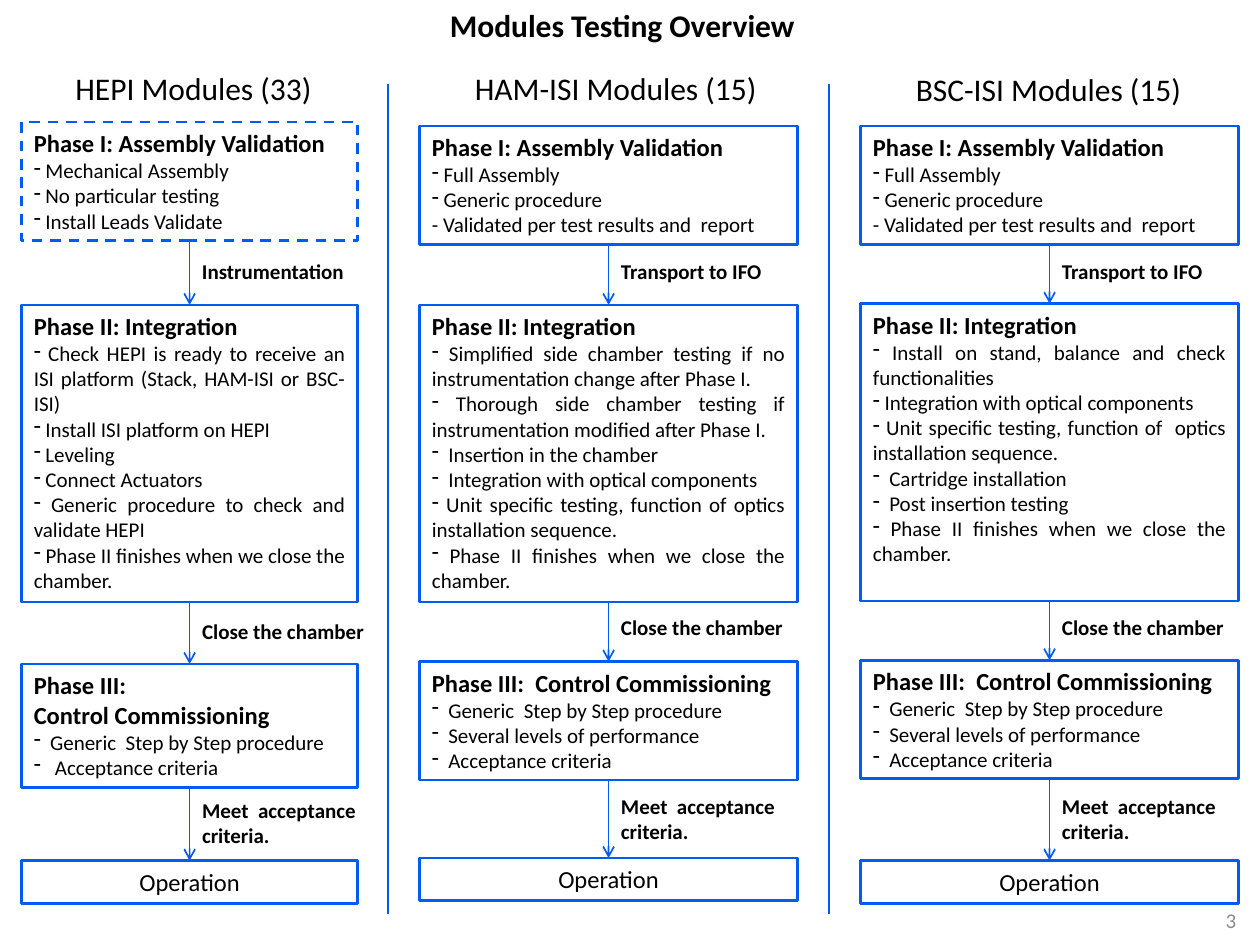
import pptx
import pptx.util
import pptx.dml.color
import pptx.enum.dml
import pptx.enum.shapes
import pptx.enum.text
import pptx.oxml.ns
import lxml.etree

Inches = pptx.util.Inches
RGB = pptx.dml.color.RGBColor
Align = pptx.enum.text.PP_ALIGN
Anchor = pptx.enum.text.MSO_ANCHOR
qn = pptx.oxml.ns.qn

BLUE = RGB(0x00, 0x5B, 0xF0)
BLACK = RGB(0x00, 0x00, 0x00)
GRAY = RGB(0x8C, 0x8C, 0x8C)
FONT = "Calibri"
HEAD, BODY = 14, 12

ASSEMBLY = "Phase I: Assembly Validation"
MERGE = "Phase II: Integration"
CONTROL = "Phase III:  Control Commissioning"
CLOSE = " Phase II finishes when we close the chamber."
STEPS = "  Generic  Step by Step procedure"
BUILD = [" Full Assembly", " Generic procedure",
         "- Validated per test results and  report"]
LEVELS = [STEPS, "  Several levels of performance", "  Acceptance criteria"]

COLUMNS = [
    {"name": "HEPI Modules (33)", "at": (0.5, 0.5, 2.17),
     "left": 0.17, "wide": 2.67, "tops": (0.97, 2.42, 5.27, 6.83),
     "highs": (0.94, 2.36, 0.98, 0.34), "notes": (2, 4.86, 6.28),
     "move": "Instrumentation", "dash": True,
     "phases": [
         ([ASSEMBLY], [" Mechanical Assembly", " No particular testing",
                       " Install Leads Validate"]),
         ([MERGE], [
             " Check HEPI is ready to receive an ISI platform (Stack, HAM-ISI or BSC-ISI)",
             " Install ISI platform on HEPI", " Leveling", " Connect Actuators",
             " Generic procedure to check and validate HEPI", CLOSE]),
         (["Phase III:", "Control Commissioning"],
          [STEPS, "   Acceptance criteria"])]},
    {"name": "HAM-ISI Modules (15)", "at": (3.67, 0.5, 2.58),
     "left": 3.33, "wide": 3, "tops": (1, 2.42, 5.25, 6.81),
     "highs": (0.94, 2.36, 0.94, 0.34), "notes": (2, 4.83, 6.25),
     "move": "Transport to IFO", "dash": False,
     "phases": [
         ([ASSEMBLY], BUILD),
         ([MERGE], [
             " Simplified side chamber testing if no instrumentation change after Phase I.",
             " Thorough side chamber testing if instrumentation modified after Phase I.",
             "  Insertion in the chamber", "  Integration with optical components",
             " Unit specific testing, function of optics installation sequence.", CLOSE]),
         ([CONTROL], LEVELS)]},
    {"name": "BSC-ISI Modules (15)", "at": (7.17, 0.51, 2.5),
     "left": 6.83, "wide": 3, "tops": (1, 2.41, 5.24, 6.83),
     "highs": (0.94, 2.36, 0.94, 0.34), "notes": (2, 4.83, 6.25),
     "move": "Transport to IFO", "dash": False,
     "phases": [
         ([ASSEMBLY], BUILD),
         ([MERGE], [
             " Install on stand, balance and check functionalities",
             " Integration with optical components",
             " Unit specific testing, function of  optics installation sequence.",
             "  Cartridge installation", "  Post insertion testing", CLOSE]),
         ([CONTROL], LEVELS)]},
]


class Sheet:
    def __init__(self, slide):
        self.slide = slide
        self.shapes = slide.shapes

    def style(self, para, size, bold=False, color=BLACK, align=Align.LEFT):
        para.alignment = align
        for run in para.runs:
            font = run.font
            font.name, font.size, font.bold = FONT, pptx.util.Pt(size), bold
            font.color.rgb = color

    def title(self, text, left, top, wide, high):
        shape = self.shapes.title
        shape.left, shape.top = Inches(left), Inches(top)
        shape.width, shape.height = Inches(wide), Inches(high)
        frame = shape.text_frame
        frame.text = text
        frame.word_wrap = False
        frame.auto_size = pptx.enum.text.MSO_AUTO_SIZE.NONE
        frame.vertical_anchor = Anchor.TOP
        self.style(frame.paragraphs[0], 18, True)

    def label(self, text, left, top, wide, high, size, anchor=Anchor.TOP, **look):
        shape = self.shapes.add_textbox(
            Inches(left), Inches(top), Inches(wide), Inches(high))
        frame = shape.text_frame
        frame.text = text
        frame.word_wrap = True
        frame.vertical_anchor = anchor
        self.style(frame.paragraphs[0], size, **look)

    def bullet(self, para):
        props = para._p.get_or_add_pPr()
        if para.text.startswith("-"):
            props.set("marL", str(Inches(0.13)))
            props.set("indent", str(-Inches(0.13)))
            return
        lxml.etree.SubElement(props, qn("a:buFontTx"))
        lxml.etree.SubElement(props, qn("a:buChar")).set("char", "-")

    def box(self, left, top, wide, high, dash=False):
        shape = self.shapes.add_shape(
            pptx.enum.shapes.MSO_SHAPE.RECTANGLE,
            Inches(left), Inches(top), Inches(wide), Inches(high))
        shape.shadow.inherit = False
        shape.fill.background()
        shape.line.color.rgb = BLUE
        shape.line.width = pptx.util.Pt(1.5)
        if dash:
            shape.line.dash_style = pptx.enum.dml.MSO_LINE.DASH
        frame = shape.text_frame
        frame.word_wrap = True
        frame.vertical_anchor = Anchor.TOP
        return frame

    def phase(self, frame, heads, items, align):
        frame.text = "\n".join(heads + items)
        for place, para in enumerate(frame.paragraphs):
            if place < len(heads):
                self.style(para, HEAD, True)
            else:
                self.style(para, BODY, align=align)
                self.bullet(para)

    def line(self, x, top, end, width, arrow=False):
        line = self.shapes.add_connector(
            pptx.enum.shapes.MSO_CONNECTOR.STRAIGHT,
            Inches(x), Inches(top), Inches(x), Inches(end))
        line.line.color.rgb = BLUE
        line.line.width = pptx.util.Pt(width)
        if arrow:
            tail = lxml.etree.SubElement(line.line._get_or_add_ln(), qn("a:tailEnd"))
            tail.set("type", "arrow")
        lxml.etree.SubElement(line._element.spPr, qn("a:effectLst"))

    def column(self, col):
        left, wide, tops, highs = (col[key] for key in ("left", "wide", "tops", "highs"))
        mid = left + wide / 2
        self.label(col["name"], *col["at"], 0.4, 18)
        for place, (heads, items) in enumerate(col["phases"]):
            first = place == 0
            frame = self.box(left, tops[place], wide, highs[place], first and col["dash"])
            self.phase(frame, heads, items, Align.LEFT if first else Align.JUSTIFY)
        frame = self.box(left, tops[3], wide, highs[3])
        frame.text = "Operation"
        self.style(frame.paragraphs[0], HEAD, align=Align.CENTER)
        notes = [(col["move"], 1.33, 0.3), ("Close the chamber", 1.58, 0.3),
                 ("Meet  acceptance criteria.", 1.58, 0.5)]
        for place, (text, span, high) in enumerate(notes):
            self.line(mid, tops[place] + highs[place], tops[place + 1], 1, True)
            self.label(text, mid, col["notes"][place], span, high, BODY, bold=True)


def main():
    deck = pptx.Presentation()
    deck.slide_width, deck.slide_height = Inches(10), Inches(7.5)
    sheet = Sheet(deck.slides.add_slide(deck.slide_layouts[5]))
    sheet.title("Modules Testing Overview", 3.47, 0, 3.02, 0.4)
    for x in (3.08, 6.58):
        sheet.line(x, 0.67, 7.25, 0.75)
    for col in COLUMNS:
        sheet.column(col)
    sheet.label("3", 9.58, 7.1, 0.33, 0.4, 12, Anchor.MIDDLE,
                color=GRAY, align=Align.RIGHT)
    deck.save("out.pptx")


if __name__ == "__main__":
    main()
